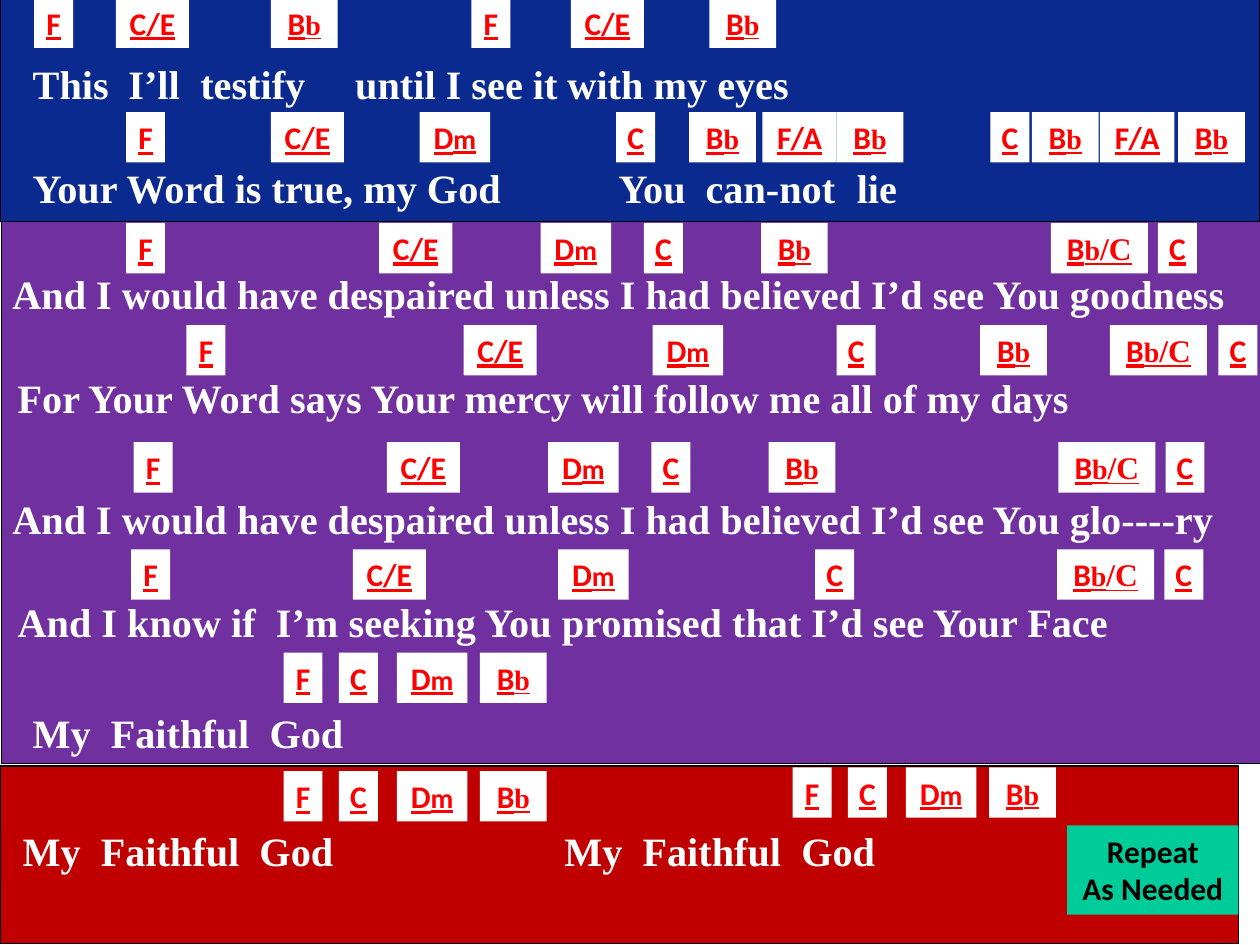
from lxml.etree import SubElement
from pptx import Presentation
from pptx.dml.color import RGBColor
from pptx.enum.shapes import MSO_SHAPE
from pptx.enum.text import MSO_ANCHOR, PP_ALIGN
from pptx.oxml.ns import qn
from pptx.util import Inches, Pt

WHITE = RGBColor(0xFF, 0xFF, 0xFF)
BLACK = RGBColor(0, 0, 0)
BLUE = RGBColor(0x0B, 0x2A, 0x8F)
PURPLE = RGBColor(0x70, 0x30, 0xA0)
DARK_RED = RGBColor(0xC0, 0, 0)
RED = RGBColor(0xFF, 0, 0)
GREEN = RGBColor(0, 0xCC, 0x99)
SANS, SERIF = "Calibri", "Times New Roman"

deck = Presentation()
deck.slide_width, deck.slide_height = Inches(10), Inches(7.5)
page = deck.slides.add_slide(deck.slide_layouts[6])


def add_block(left, top, width, height, color):
    block = page.shapes.add_shape(MSO_SHAPE.RECTANGLE, Inches(left), Inches(top),
                                  Inches(width), Inches(height))
    block.shadow.inherit = False
    block.fill.solid()
    block.fill.fore_color.rgb = color
    block.line.fill.background()
    block.text_frame.word_wrap = False
    block.text_frame.vertical_anchor = MSO_ANCHOR.TOP
    block.text_frame.paragraphs[0].alignment = PP_ALIGN.CENTER
    return block


def add_span(para, text, color, **formats):
    span = para.add_run()
    span.text = text
    span.font.color.rgb = color
    for name, value in formats.items():
        setattr(span.font, name, value)


# Song section panels
for left, top, width, height, color in [
    (0.01, 1.74, 10, 4.32, PURPLE),
    (0, -0.01, 10, 1.77, BLUE),
    (0, 6.08, 9.83, 1.41, DARK_RED),
]:
    panel = add_block(left, top, width, height, color)
    panel.line.color.rgb = BLACK
    panel.line.width = Pt(0.75)

# Lyrics: top of the line, then each phrase with its left edge
lyrics = [
    (0.42, [("This", 0.26), ("I’ll", 1.02), ("testify", 1.59),
            ("until I see it with my eyes", 2.82)]),
    (1.25, [("Your Word is true, my God", 0.26), ("You", 4.91),
            ("can-not", 5.6), ("lie", 6.8)]),
    (2.09, [("And I would have despaired unless I had believed I’d see You goodness", 0.1)]),
    (2.91, [("For Your Word says Your mercy will follow me all of my days", 0.14)]),
    (3.87, [("And I would have despaired unless I had believed I’d see You glo----ry", 0.1)]),
    (4.69, [("And I know if", 0.14),
            ("I’m seeking You promised that I’d see Your Face", 2.19)]),
    (5.57, [("My", 0.26), ("Faithful", 0.88), ("God", 2.14)]),
    (6.51, [("My", 0.18), ("Faithful", 0.8), ("God", 2.06),
            ("My", 4.48), ("Faithful", 5.1), ("God", 6.36)]),
]
for top, phrases in lyrics:
    box = page.shapes.add_textbox(0, Inches(top), Inches(10), Inches(0.49))
    start = phrases[0][1]
    box.text_frame.word_wrap = True
    box.text_frame.margin_left = Inches(start)
    box.text_frame.margin_right = 0
    para = box.text_frame.paragraphs[0]
    add_span(para, "\t".join(phrase for phrase, _ in phrases), WHITE,
             size=Pt(23), name=SERIF, bold=True)
    if len(phrases) > 1:
        tabs = SubElement(para._p.get_or_add_pPr(), qn("a:tabLst"))
        for _, left in phrases[1:]:
            SubElement(tabs, qn("a:tab"), pos=str(Inches(left - start)), algn="l")

# Chord labels: width and text pieces of each chord
chords = {
    "F": (0.31, [("F", 18, SANS)]),
    "C": (0.31, [("C", 18, SANS)]),
    "C/E": (0.58, [("C/E", 18, SANS)]),
    "F/A": (0.59, [("F/A", 18, SANS)]),
    "Dm": (0.56, [("D", 18, SANS), ("m", 16, SANS)]),
    "Bb": (0.53, [("B", 18, SANS), ("b", 16, SERIF)]),
    "Bb/C": (0.77, [("B", 18, SANS), ("b", 16, SERIF), ("/C", 18, SERIF)]),
}
chord_rows = [
    (-0.02, [("F", 0.27), ("C/E", 0.92), ("Bb", 2.15),
             ("F", 3.74), ("C/E", 4.53), ("Bb", 5.63)]),
    (0.89, [("F", 1), ("C/E", 2.15), ("Dm", 3.33), ("C", 4.89), ("Bb", 5.47),
            ("F/A", 6.05), ("Bb", 6.64), ("C", 7.86), ("Bb", 8.19),
            ("F/A", 8.73), ("Bb", 9.35)]),
    (1.77, [("F", 1), ("C/E", 3.01), ("Dm", 4.29), ("C", 5.11),
            ("Bb", 6.04), ("Bb/C", 8.34), ("C", 9.19)]),
    (2.58, [("F", 1.48), ("C/E", 3.68), ("Dm", 5.18), ("C", 6.64),
            ("Bb", 7.78), ("Bb/C", 8.81), ("C", 9.67)]),
    (3.51, [("F", 1.06), ("C/E", 3.07), ("Dm", 4.35), ("C", 5.17),
            ("Bb", 6.1), ("Bb/C", 8.4), ("C", 9.25)]),
    (4.36, [("F", 1.04), ("C/E", 2.8), ("Dm", 4.43), ("C", 6.47),
            ("Bb/C", 8.39), ("C", 9.24)]),
]
# The "My Faithful God" refrain uses one chord pattern three times
for left, top in [(2.25, 5.18), (2.25, 6.12), (6.29, 6.09)]:
    chord_rows.append((top, [("F", left), ("C", left + 0.44),
                             ("Dm", left + 0.9), ("Bb", left + 1.56)]))

for top, row in chord_rows:
    for chord, left in row:
        width, pieces = chords[chord]
        label = add_block(left, top, width, 0.4, WHITE)
        for text, size, font in pieces:
            add_span(label.text_frame.paragraphs[0], text, RED, size=Pt(size),
                     name=font, bold=True, underline=True)

# Repeat note
note = add_block(8.47, 6.55, 1.36, 0.71, GREEN)
para = note.text_frame.paragraphs[0]
note_format = {"size": Pt(18), "name": SANS, "bold": True}
add_span(para, "Repeat", BLACK, **note_format)
para.add_line_break()
add_span(para, "As Needed", BLACK, **note_format)

deck.save("out.pptx")
